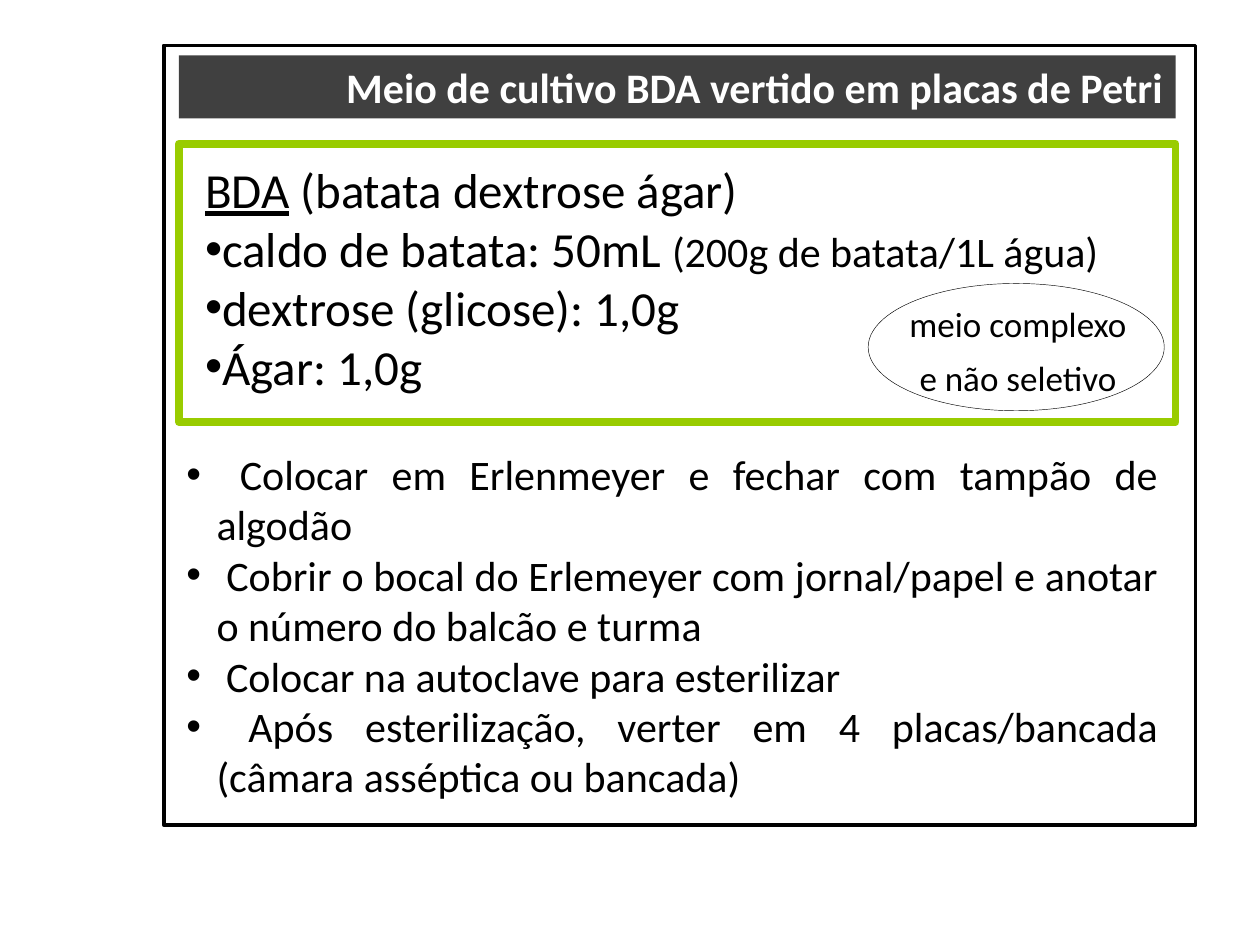
"""Build the slide on BDA culture medium poured into Petri dishes."""
from dataclasses import dataclass
from typing import Optional

import lxml.etree
import pptx
import pptx.dml.color
import pptx.enum.shapes
import pptx.enum.text
import pptx.oxml.ns
import pptx.util

SLIDE_WIDTH = pptx.util.Inches(10)
SLIDE_HEIGHT = pptx.util.Inches(7.5)
ALIGN = pptx.enum.text.PP_ALIGN
SHAPE = pptx.enum.shapes.MSO_SHAPE
ANCHOR = pptx.enum.text.MSO_ANCHOR


@dataclass(frozen=True)
class Theme:
    font: str = "Calibri"
    ink: str = "000000"
    light: str = "FFFFFF"
    banner: str = "404040"
    accent: str = "99CC00"
    recipe_size: int = 28
    body_size: int = 24
    note_size: int = 20


THEME = Theme()


@dataclass(frozen=True)
class Area:
    """A rectangle given in percent of the slide's width and height."""
    left: float
    top: float
    width: float
    height: float

    def box(self) -> tuple[int, int, int, int]:
        return (int(SLIDE_WIDTH * self.left / 100), int(SLIDE_HEIGHT * self.top / 100),
                int(SLIDE_WIDTH * self.width / 100), int(SLIDE_HEIGHT * self.height / 100))


@dataclass(frozen=True)
class Run:
    text: str
    size: Optional[int] = None
    underline: Optional[bool] = None


@dataclass(frozen=True)
class Line:
    runs: tuple[Run, ...]
    hanging: float = 0


@dataclass(frozen=True)
class Style:
    size: int
    color: str = THEME.ink
    align: ALIGN = ALIGN.LEFT
    bold: bool = False
    spacing: float = 1.0


@dataclass(frozen=True)
class Outline:
    kind: SHAPE
    area: Area
    color: str
    weight: float


RECIPE = (
    Line((Run("BDA", underline=True), Run(" (batata dextrose ágar)"))),
    Line((Run("caldo de batata: 50mL "),
          Run("(200g de batata/1L água)", size=THEME.body_size)), hanging=0.12),
    Line((Run("dextrose (glicose): 1,0g"),), hanging=0.12),
    Line((Run("Ágar: 1,0g"),), hanging=0.12),
)
STEPS = tuple(Line((Run(text),), hanging=0.24) for text in (
    " Colocar em Erlenmeyer e fechar com tampão de algodão",
    " Cobrir o bocal do Erlemeyer com jornal/papel e anotar o número do balcão e turma",
    " Colocar na autoclave para esterilizar",
    " Após esterilização, verter em 4 placas/bancada (câmara asséptica ou bancada)",
))
NOTE = (Line((Run("meio complexo e não seletivo"),)),)
TITLE = (Line((Run("Meio de cultivo BDA vertido em placas de Petri"),)),)

RECIPE_FRAME = Outline(SHAPE.RECTANGLE, Area(14.2, 15.2, 79.1, 29.47), THEME.accent, 4.5)
NOTE_OVAL = Outline(SHAPE.OVAL, Area(68.9, 30, 23.5, 13.47), THEME.ink, 0.25)
PAGE_FRAME = Outline(SHAPE.RECTANGLE, Area(13, 4.8, 81.9, 82.53), THEME.ink, 2)


def rgb(color: str) -> pptx.dml.color.RGBColor:
    return pptx.dml.color.RGBColor.from_string(color)


def add_bullet(paragraph, hanging: float) -> None:
    properties = paragraph._p.get_or_add_pPr()
    indent = pptx.util.Inches(hanging)
    properties.set("marL", str(indent))
    properties.set("indent", str(-indent))
    font = lxml.etree.SubElement(properties, pptx.oxml.ns.qn("a:buFont"))
    font.set("typeface", "Arial")
    bullet = lxml.etree.SubElement(properties, pptx.oxml.ns.qn("a:buChar"))
    bullet.set("char", "•")


def write_lines(frame, lines: tuple[Line, ...], style: Style) -> None:
    frame.word_wrap = True
    for index, line in enumerate(lines):
        paragraph = frame.add_paragraph() if index else frame.paragraphs[0]
        paragraph.alignment = style.align
        paragraph.line_spacing = style.spacing
        if line.hanging:
            add_bullet(paragraph, line.hanging)
        paragraph.font.name = THEME.font
        paragraph.font.size = pptx.util.Pt(style.size)
        paragraph.font.bold = style.bold
        paragraph.font.color.rgb = rgb(style.color)
        for item in line.runs:
            run = paragraph.add_run()
            run.text = item.text
            if item.size:
                run.font.size = pptx.util.Pt(item.size)
            if item.underline:
                run.font.underline = True


def add_text(slide, area: Area, lines: tuple[Line, ...], style: Style) -> None:
    write_lines(slide.shapes.add_textbox(*area.box()).text_frame, lines, style)


def add_outline(slide, outline: Outline) -> None:
    shape = slide.shapes.add_shape(outline.kind, *outline.area.box())
    shape.shadow.inherit = False
    shape.fill.background()
    shape.line.color.rgb = rgb(outline.color)
    shape.line.width = pptx.util.Pt(outline.weight)


def add_banner(slide, area: Area, lines: tuple[Line, ...], style: Style) -> None:
    shape = slide.shapes.add_shape(SHAPE.RECTANGLE, *area.box())
    shape.shadow.inherit = False
    shape.fill.solid()
    shape.fill.fore_color.rgb = rgb(THEME.banner)
    shape.line.fill.background()
    shape.text_frame.vertical_anchor = ANCHOR.TOP
    write_lines(shape.text_frame, lines, style)


def main() -> None:
    presentation = pptx.Presentation()
    presentation.slide_width = SLIDE_WIDTH
    presentation.slide_height = SLIDE_HEIGHT
    slide = presentation.slides.add_slide(presentation.slide_layouts[6])
    add_text(slide, Area(15.3, 16.27, 77, 26.53), RECIPE, Style(THEME.recipe_size))
    add_outline(slide, RECIPE_FRAME)
    add_text(slide, Area(70.5, 30, 20.6, 13.07), NOTE,
             Style(THEME.note_size, align=ALIGN.CENTER, spacing=1.3))
    add_text(slide, Area(13.8, 46.8, 79.1, 39.07), STEPS,
             Style(THEME.body_size, align=ALIGN.JUSTIFY))
    add_outline(slide, NOTE_OVAL)
    add_outline(slide, PAGE_FRAME)
    add_banner(slide, Area(14.2, 5.87, 79.1, 6.67), TITLE,
               Style(THEME.body_size, THEME.light, ALIGN.RIGHT, bold=True))
    presentation.save("out.pptx")


if __name__ == "__main__":
    main()
